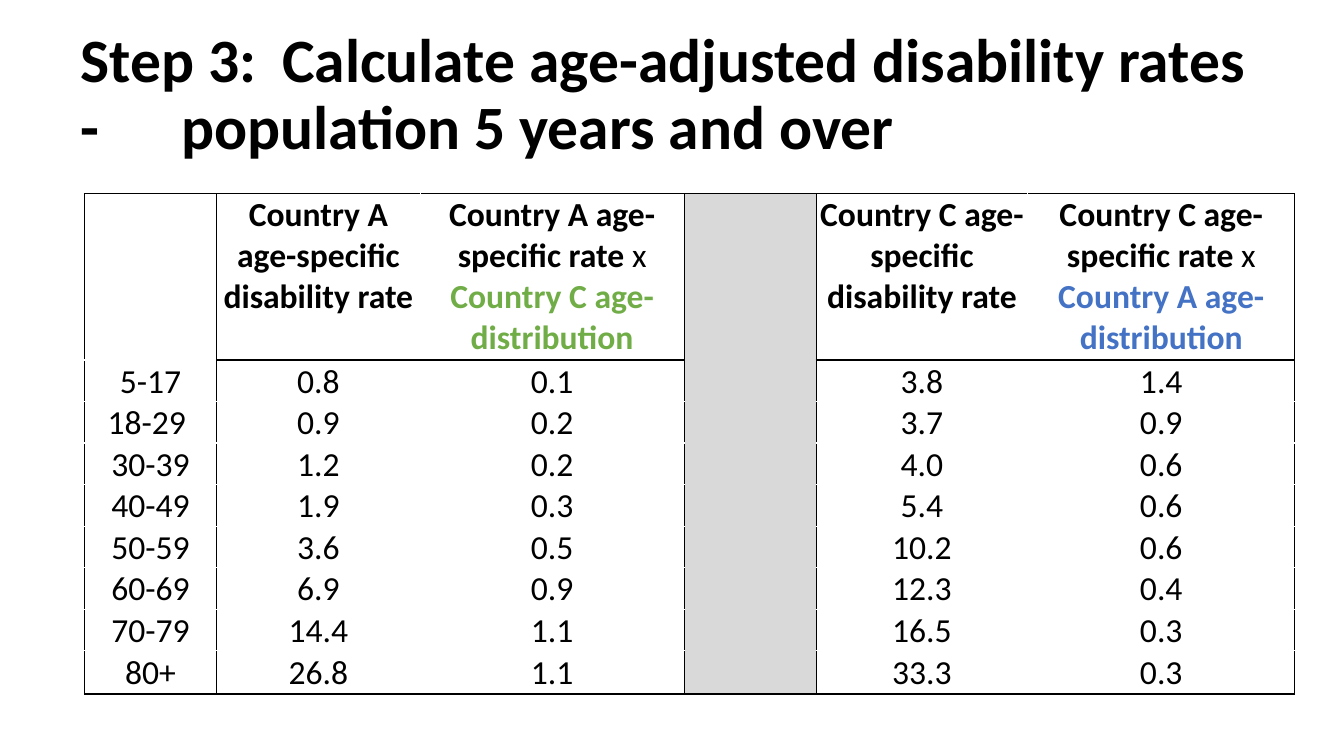
from lxml.etree import SubElement as Sub
from pptx import Presentation
from pptx.dml.color import RGBColor as RGB
from pptx.enum.text import MSO_ANCHOR as ANCHOR, PP_ALIGN as ALIGN
from pptx.oxml.ns import qn
from pptx.util import Cm, Pt

COLORS = {
    "black": "000000",
    "white": "FFFFFF",
    "grey": "D9D9D9",
    "green": "70AD47",
    "blue": "4472C4",
}
FONT = "Calibri"
TITLE = "Step 3:\tCalculate age-adjusted disability rates -\t\tpopulation 5 years and over"
COL_WIDTHS = [3.33, 5.13, 6.65, 3.33, 5.33, 6.73]
HEADER_HEIGHT, ROW_HEIGHT, LAST_HEIGHT = 4.19, 1.04, 1.09
GAP_COL = 3
HEADERS = [
    [],
    [("Country A age-specific disability rate", "black", True)],
    [("Country A age-specific rate ", "black", True), ("x ", "black", False),
     ("Country C age-distribution", "green", True)],
    [],
    [("Country C age-specific disability rate", "black", True)],
    [("Country C age-specific rate ", "black", True), ("x ", "black", False),
     ("Country A age-distribution", "blue", True)],
]
RATES = [
    ["5-17", "0.8", "0.1", "", "3.8", "1.4"],
    ["18-29 ", "0.9", "0.2", "", "3.7", "0.9"],
    ["30-39", "1.2", "0.2", "", "4.0", "0.6"],
    ["40-49", "1.9", "0.3", "", "5.4", "0.6"],
    ["50-59", "3.6", "0.5", "", "10.2", "0.6"],
    ["60-69", "6.9", "0.9", "", "12.3", "0.4"],
    ["70-79", "14.4", "1.1", "", "16.5", "0.3"],
    ["80+", "26.8", "1.1", "", "33.3", "0.3"],
]


def add_run(p, text, size, color="black", bold=False):
    r = p.add_run()
    r.text = text
    r.font.name = FONT
    r.font.size = Pt(size)
    r.font.bold = bold
    r.font.color.rgb = RGB.from_string(COLORS[color])


def add_title(slide, left, top, width, height):
    sp = slide.shapes.add_textbox(Cm(left), Cm(top), Cm(width), Cm(height))
    tf = sp.text_frame
    tf.word_wrap = True
    tf.vertical_anchor = ANCHOR.MIDDLE
    p = tf.paragraphs[0]
    p.line_spacing = 0.9
    add_run(p, TITLE, 44, bold=True)


def border_colors(row, col):
    last = len(RATES)
    inner = None if col == GAP_COL else "white"
    under_header = "black" if col not in (0, GAP_COL) else inner
    return {
        "lnL": "white" if col in (2, 5) else "black",
        "lnR": "white" if col in (1, 4) else "black",
        "lnT": "black" if row == 0 else under_header if row == 1 else inner,
        "lnB": "black" if row == last else under_header if row == 0 else inner,
    }


def set_borders(cell, borders):
    tc_pr = cell._tc.get_or_add_tcPr()
    for side, color in borders.items():
        ln = Sub(tc_pr, qn(f"a:{side}"), w=str(Pt(1)))
        if color:
            fill = Sub(ln, qn("a:solidFill"))
            Sub(fill, qn("a:srgbClr"), val=COLORS[color])
        else:
            Sub(ln, qn("a:noFill"))


def format_cell(cell, row, col, runs):
    cell.margin_left = cell.margin_right = cell.margin_top = Cm(0.03)
    cell.margin_bottom = 0
    cell.vertical_anchor = ANCHOR.BOTTOM if row else ANCHOR.TOP
    set_borders(cell, border_colors(row, col))
    if col == GAP_COL:
        cell.fill.solid()
        cell.fill.fore_color.rgb = RGB.from_string(COLORS["grey"])
    else:
        cell.fill.background()
    p = cell.text_frame.paragraphs[0]
    p.alignment = ALIGN.CENTER
    for text, color, bold in runs:
        add_run(p, text, 24, color, bold)


def add_rate_table(slide, left, top):
    body = [[[(text, "black", False)] if text else [] for text in line] for line in RATES]
    rows = [HEADERS] + body
    heights = [HEADER_HEIGHT] + [ROW_HEIGHT] * (len(RATES) - 1) + [LAST_HEIGHT]
    table = slide.shapes.add_table(
        len(rows), len(COL_WIDTHS), Cm(left), Cm(top),
        Cm(sum(COL_WIDTHS)), Cm(sum(heights))).table
    table.first_row = table.horz_banding = False
    for column, width in zip(table.columns, COL_WIDTHS):
        column.width = Cm(width)
    for i, (line, height) in enumerate(zip(rows, heights)):
        table.rows[i].height = Cm(height)
        for j, runs in enumerate(line):
            format_cell(table.cell(i, j), i, j, runs)


def main():
    prs = Presentation()
    prs.slide_width, prs.slide_height = Cm(33.87), Cm(19.05)
    slide = prs.slides.add_slide(prs.slide_layouts[6])
    add_title(slide, 1.78, 0.58, 30.1, 3.68)
    add_rate_table(slide, 2.13, 4.88)
    prs.save("out.pptx")


if __name__ == "__main__":
    main()
